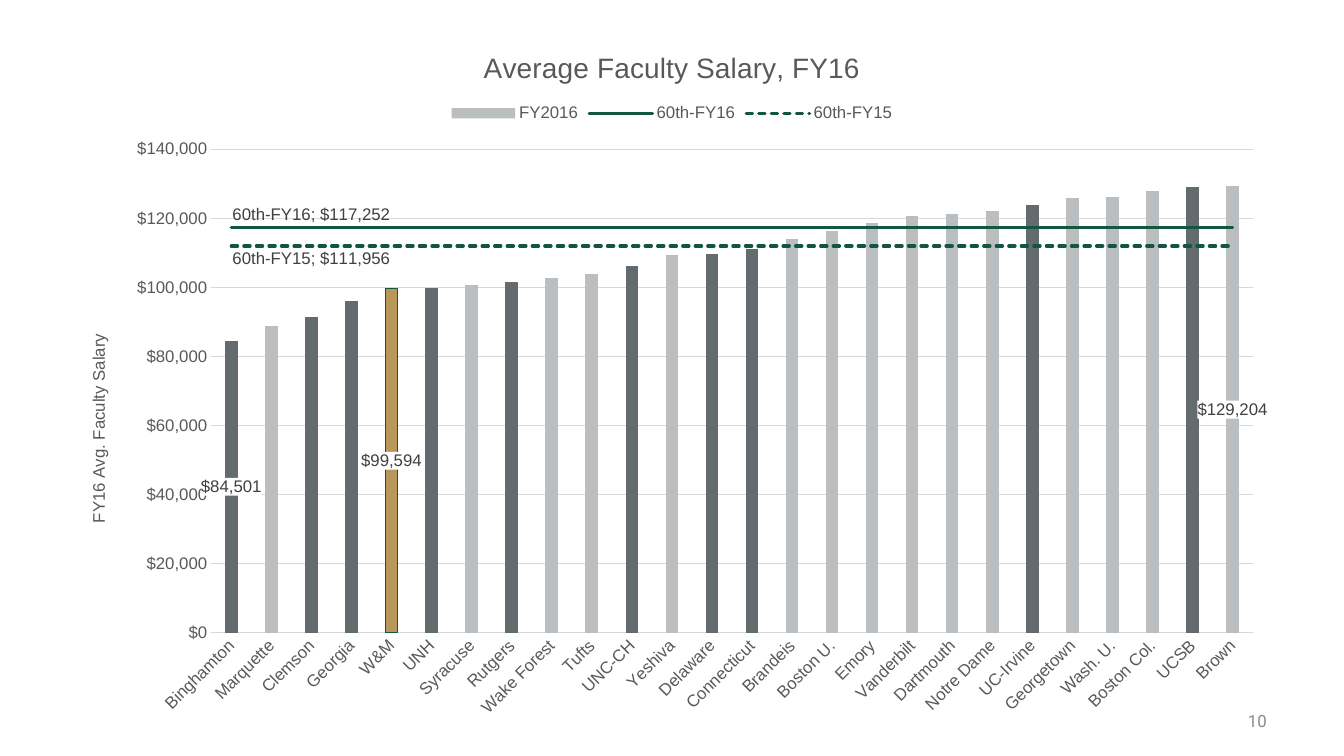
"""Build the average faculty salary slide."""
from lxml.etree import SubElement
from pptx import Presentation
from pptx.chart.data import CategoryChartData
from pptx.dml.color import RGBColor
from pptx.enum.chart import (
    XL_CHART_TYPE, XL_LABEL_POSITION, XL_LEGEND_POSITION, XL_MARKER_STYLE, XL_TICK_MARK)
from pptx.enum.dml import MSO_LINE
from pptx.enum.text import MSO_ANCHOR, PP_ALIGN
from pptx.oxml import parse_xml
from pptx.oxml.ns import nsdecls, qn
from pptx.util import Pt

GREY, LABEL, GRID = "595959", "404040", "D9D9D9"
LIGHT_BAR, DARK_BAR, GOLD, GREEN = "BABEC0", "646B6E", "B9975B", "115740"


def color(hex_code):
    return RGBColor.from_string(hex_code)


def set_font(font, size=12, hex_code=GREY, name="Arial"):
    formats = {"size": Pt(size), "name": name, "bold": False}
    for attribute, value in formats.items():
        setattr(font, attribute, value)
    font.color.rgb = color(hex_code)


salaries = {
    "Binghamton": 84501, "Marquette": 88830, "Clemson": 91485, "Georgia": 96084,
    "W&M": 99594, "UNH": 99747, "Syracuse": 100818, "Rutgers": 101538,
    "Wake Forest": 102636, "Tufts": 103797, "UNC-CH": 106281, "Yeshiva": 109422,
    "Delaware": 109692, "Connecticut": 111159, "Brandeis": 113886, "Boston U.": 116280,
    "Emory": 118710, "Vanderbilt": 120771, "Dartmouth": 121347, "Notre Dame": 122247,
    "UC-Irvine": 123957, "Georgetown": 125811, "Wash. U.": 126189, "Boston Col.": 127899,
    "UCSB": 128943, "Brown": 129204,
}
dark_schools = ["Binghamton", "Clemson", "Georgia", "UNH", "Rutgers", "UNC-CH",
                "Delaware", "Connecticut", "UC-Irvine", "UCSB"]
labelled_schools = ["Binghamton", "W&M", "Brown"]
benchmarks = [
    ("60th-FY16", 117252, MSO_LINE.SOLID, XL_LABEL_POSITION.ABOVE),
    ("60th-FY15", 111956, MSO_LINE.SQUARE_DOT, XL_LABEL_POSITION.BELOW),
]
schools = list(salaries)

presentation = Presentation()
presentation.slide_width, presentation.slide_height = Pt(960), Pt(540)
slide = presentation.slides.add_slide(presentation.slide_layouts[6])

chart_data = CategoryChartData(number_format='"$"#,##0')
chart_data.categories = schools
chart_data.add_series("FY2016", list(salaries.values()))
for name, salary, dash, position in benchmarks:
    chart_data.add_series(name, [salary] * len(schools))
chart = slide.shapes.add_chart(
    XL_CHART_TYPE.COLUMN_CLUSTERED, Pt(48), Pt(18), Pt(864), Pt(504), chart_data).chart
set_font(chart.font)

chart.has_title = True
chart.chart_title.text_frame.text = "Average Faculty Salary, FY16"
set_font(chart.chart_title.text_frame.paragraphs[0].runs[0].font, size=20)
chart.has_legend = True
chart.legend.position = XL_LEGEND_POSITION.TOP
chart.legend.include_in_layout = False
set_font(chart.legend.font)

category_axis, value_axis = chart.category_axis, chart.value_axis
for axis in (category_axis, value_axis):
    axis.major_tick_mark = axis.minor_tick_mark = XL_TICK_MARK.NONE
    set_font(axis.tick_labels.font)
category_axis._element.find(qn("c:txPr")).find(qn("a:bodyPr")).set("rot", "-2700000")
value_axis.minimum_scale, value_axis.maximum_scale, value_axis.major_unit = 0, 140000, 20000
value_axis.tick_labels.number_format = '"$"#,##0'
value_axis.tick_labels.number_format_is_linked = False
value_axis.format.line.fill.background()
for line in (category_axis.format.line, value_axis.major_gridlines.format.line):
    line.color.rgb = color(GRID)
    line.width = Pt(0.75)
value_axis.has_title = True
value_axis.axis_title.text_frame.text = "FY16 Avg. Faculty Salary"
set_font(value_axis.axis_title.text_frame.paragraphs[0].runs[0].font)

bar_plot = chart.plots[0]
bar_plot.vary_by_categories = False
bar_plot.gap_width, bar_plot.overlap = 219, -27
bar_element = bar_plot._element
line_element = parse_xml(
    f'<c:lineChart {nsdecls("c")}><c:grouping val="standard"/><c:varyColors val="0"/>'
    '<c:marker val="1"/></c:lineChart>')
line_marker = line_element.find(qn("c:marker"))
for series_element in bar_element.findall(qn("c:ser"))[1:]:
    for bar_setting in series_element.findall(qn("c:invertIfNegative")):
        series_element.remove(bar_setting)
    line_marker.addprevious(series_element)
for axis_id in bar_element.findall(qn("c:axId")):
    SubElement(line_element, qn("c:axId")).set("val", axis_id.get("val"))
bar_element.addnext(line_element)

bars = bar_plot.series[0]
bars.format.fill.solid()
bars.format.fill.fore_color.rgb = color(LIGHT_BAR)
bars.data_labels.show_value = False
for school in dark_schools + ["W&M"]:
    bar_format = bars.points[schools.index(school)].format
    bar_format.fill.solid()
    bar_format.fill.fore_color.rgb = color(GOLD if school == "W&M" else DARK_BAR)
    if school == "W&M":
        bar_format.line.color.rgb = color(GREEN)
        bar_format.line.width = Pt(0.75)
for school in labelled_schools:
    label = bars.points[schools.index(school)].data_label
    set_font(label.font, hex_code=LABEL)
    label.position = XL_LABEL_POSITION.CENTER
for label_element in bars._element.findall(".//" + qn("c:dLbl")):
    for old_fill in label_element.findall(qn("c:spPr")):
        label_element.remove(old_fill)
    label_element.find(qn("c:txPr")).addprevious(parse_xml(
        f'<c:spPr {nsdecls("c", "a")}><a:solidFill><a:srgbClr val="FFFFFF"/></a:solidFill></c:spPr>'))

for series, (name, salary, dash, position) in zip(chart.plots[1].series, benchmarks):
    series.smooth = False
    series.marker.style = XL_MARKER_STYLE.NONE
    series.format.line.color.rgb = color(GREEN)
    series.format.line.width = Pt(2.25)
    series.format.line.dash_style = dash
    series._element.find(qn("c:spPr")).find(qn("a:ln")).set("cap", "rnd")
    series.data_labels.show_value = False
    label = series.points[2].data_label
    set_font(label.font, hex_code=LABEL)
    label.position = position
    label_element = series._element.find(".//" + qn("c:dLbl"))
    label_element.find(qn("c:showSerName")).set("val", "1")
    SubElement(label_element, qn("c:separator")).text = "; "

page_number = slide.shapes.add_textbox(Pt(688), Pt(500), Pt(224), Pt(29))
page_number.text_frame.word_wrap = True
page_number.text_frame.vertical_anchor = MSO_ANCHOR.MIDDLE
paragraph = page_number.text_frame.paragraphs[0]
paragraph.text = "10"
paragraph.alignment = PP_ALIGN.RIGHT
set_font(paragraph.font, hex_code="8C8C8C", name="Roboto")

presentation.save("out.pptx")
